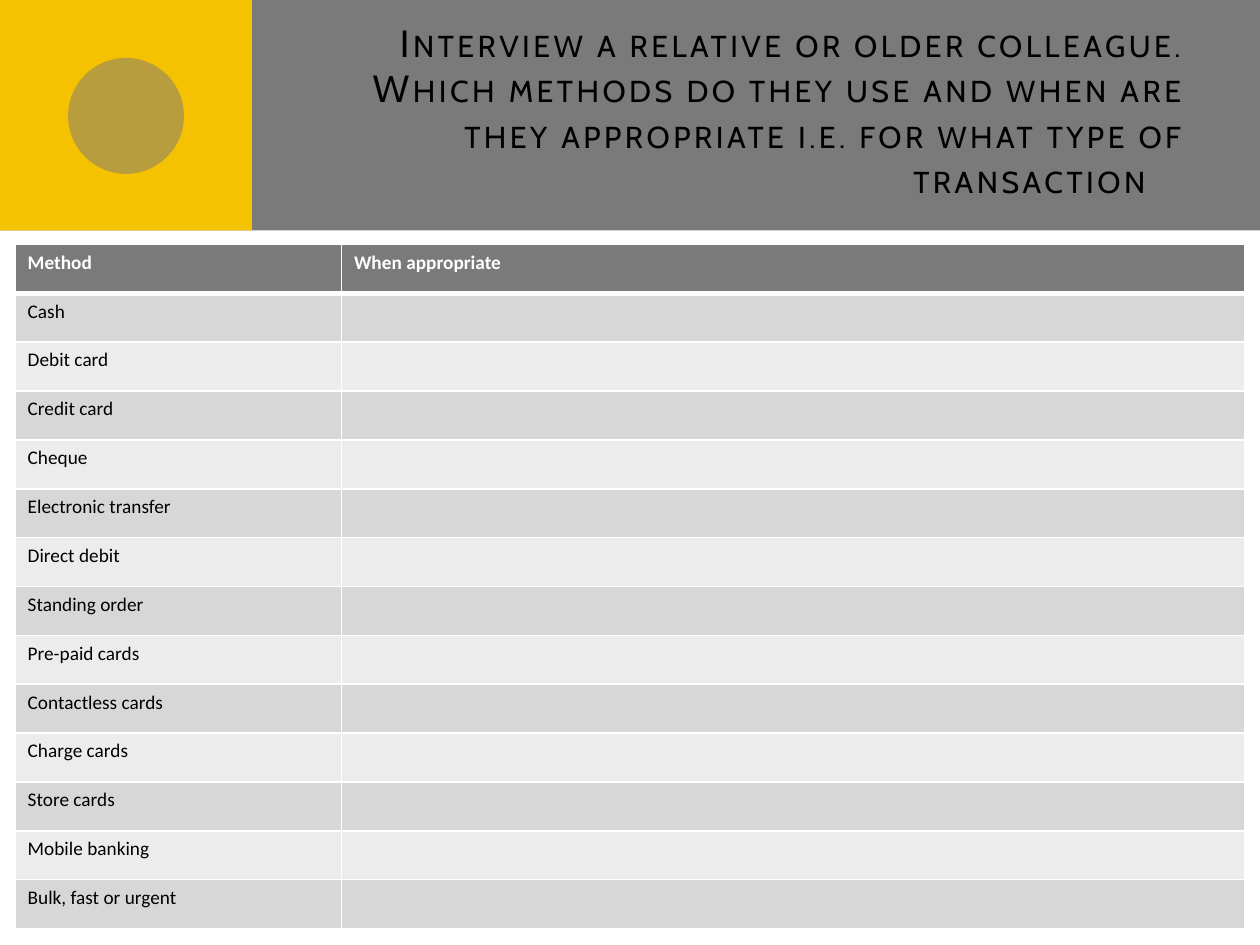
from dataclasses import dataclass

from lxml import etree
from pptx import Presentation
from pptx import util as u
from pptx.dml.color import RGBColor
from pptx.enum import shapes, text
from pptx.oxml.ns import qn

GREY, YELLOW, WHITE, BLACK = "7A7A7A", "F5C201", "FFFFFF", "000000"
BANDS = ("D7D7D7", "ECECEC")
TITLE = ("Interview a relative or older colleague. Which methods do they use "
         "and when are they appropriate i.e. for what type of transaction")
HEADERS = ("Method", "When appropriate")
METHODS = (
    "Cash", "Debit card", "Credit card", "Cheque", "Electronic transfer",
    "Direct debit", "Standing order", "Pre-paid cards", "Contactless cards",
    "Charge cards", "Store cards", "Mobile banking", "Bulk, fast or urgent",
)
COLUMNS = (2.59, 7.17)
TABLE_HEIGHT = 5.43
CELL_SIZE = 11


@dataclass
class Block:
    kind: shapes.MSO_SHAPE
    left: float
    top: float
    width: float
    height: float
    fill: str
    opacity: int = 100


BLOCKS = (
    Block(shapes.MSO_SHAPE.RECTANGLE, 0, 0, 10, 1.83, GREY),
    Block(shapes.MSO_SHAPE.RECTANGLE, 0, 0, 2, 1.83, YELLOW),
    Block(shapes.MSO_SHAPE.OVAL, 0.54, 0.46, 0.92, 0.92, GREY, 50),
)


def set_colour(fill, colour: str) -> None:
    fill.solid()
    fill.fore_color.rgb = RGBColor.from_string(colour)


def add_block(slide, block: Block) -> None:
    sp = slide.shapes.add_shape(
        block.kind, u.Inches(block.left), u.Inches(block.top),
        u.Inches(block.width), u.Inches(block.height))
    sp.shadow.inherit = False
    sp.line.fill.background()
    set_colour(sp.fill, block.fill)
    if block.opacity < 100:
        clr = sp.fill._xPr.find(qn("a:solidFill"))[0]
        etree.SubElement(clr, qn("a:alpha"), val=str(block.opacity * 1000))


def add_run(p, words: str, font: str, size: float, colour: str, bold: bool = False):
    r = p.add_run()
    r.text = words
    r.font.name = font
    r.font.size = u.Pt(size)
    r.font.bold = bold
    set_colour(r.font.fill, colour)
    return r


def add_title(slide) -> None:
    sp = slide.shapes.add_textbox(
        u.Inches(2.67), u.Inches(0.25), u.Inches(6.83), u.Inches(1.25))
    tf = sp.text_frame
    tf.word_wrap = True
    tf.vertical_anchor = text.MSO_ANCHOR.MIDDLE
    p = tf.paragraphs[0]
    p.alignment = text.PP_ALIGN.RIGHT
    r = add_run(p, TITLE, "Cabin", 21.6, BLACK)
    props = r.font._element
    props.set("cap", "small")
    props.set("spc", "200")


def add_borders(cell, is_header: bool) -> None:
    props = cell._tc.get_or_add_tcPr()
    widths = {"lnL": 1, "lnR": 1, "lnT": 1, "lnB": 1}
    if is_header:
        widths["lnB"] = 3
    for i, (side, width) in enumerate(widths.items()):
        ln = etree.Element(qn(f"a:{side}"), w=str(u.Pt(width)))
        fill = etree.SubElement(ln, qn("a:solidFill"))
        etree.SubElement(fill, qn("a:srgbClr"), val=WHITE)
        props.insert(i, ln)


def fill_cell(cell, words: str, colour: str, is_header: bool) -> None:
    set_colour(cell.fill, colour)
    add_borders(cell, is_header)
    p = cell.text_frame.paragraphs[0]
    if words:
        add_run(p, words, "Calibri", CELL_SIZE, WHITE if is_header else BLACK, is_header)
    else:
        etree.SubElement(p._p, qn("a:endParaRPr"), sz=str(CELL_SIZE * 100))


def add_methods_table(slide) -> None:
    rows = [HEADERS] + [(method, "") for method in METHODS]
    table = slide.shapes.add_table(
        len(rows), len(COLUMNS), u.Inches(0.12), u.Inches(1.94),
        u.Inches(sum(COLUMNS)), u.Inches(TABLE_HEIGHT)).table
    for column, width in zip(table.columns, COLUMNS):
        column.width = u.Inches(width)
    for i, row in enumerate(rows):
        table.rows[i].height = u.Inches(TABLE_HEIGHT / len(rows))
        colour = BANDS[(i - 1) % 2] if i else GREY
        for j, words in enumerate(row):
            fill_cell(table.cell(i, j), words, colour, i == 0)


def main() -> None:
    prs = Presentation()
    prs.slide_width = u.Inches(10)
    prs.slide_height = u.Inches(7.5)
    s = prs.slides.add_slide(prs.slide_layouts[6])
    for block in BLOCKS:
        add_block(s, block)
    add_title(s)
    add_methods_table(s)
    prs.save("out.pptx")


if __name__ == "__main__":
    main()
